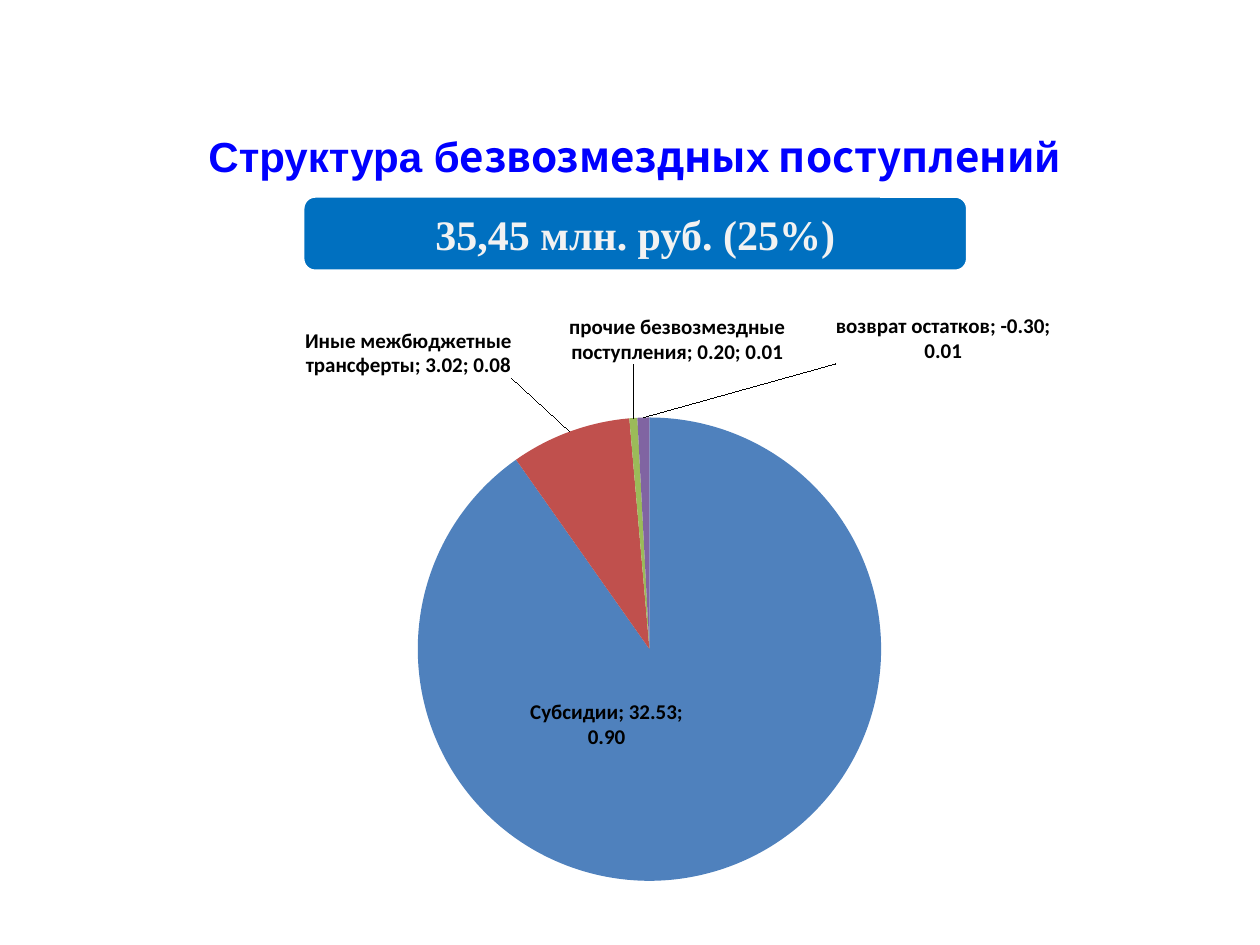
from pptx import Presentation
from pptx.chart.data import CategoryChartData as Data
from pptx.dml.color import RGBColor as RGB
from pptx.enum.chart import XL_CHART_TYPE as Kind, XL_LABEL_POSITION as Pos
from pptx.enum.shapes import MSO_SHAPE as Form
from pptx.enum.text import MSO_ANCHOR as Anchor, PP_ALIGN as Align
from pptx.oxml import parse_xml
from pptx.oxml.ns import nsdecls
from pptx.util import Pt

SANS, NOTO = "Arial", "Noto Sans CJK SC"
TITLE = [("Структура б", SANS), ("езвозмездны", NOTO), ("х", SANS),
         (" поступлени", NOTO), ("й", SANS)]
TOTAL = [("35,45 млн. руб. (25%)", "Times New Roman")]
SLICES = [
    ("Субсидии", 32.53, "4F81BD", Pos.CENTER, -0.07, -0.06),
    ("Иные межбюджетные трансферты", 3.02, "C0504D", Pos.OUTSIDE_END, -0.05, -0.08),
    ("прочие безвозмездные поступления", 0.2, "9BBB59", Pos.OUTSIDE_END, 0.04, -0.08),
    ("возврат остатков", -0.3, "8064A2", Pos.OUTSIDE_END, 0.27, -0.08),
]
PLOT = {"x": 0.07, "y": 0.18, "w": 0.84, "h": 0.8}


def paint(fmt, color):
    fmt.solid()
    fmt.fore_color.rgb = RGB.from_string(color)


def style(font, size, color, name):
    font.size, font.bold, font.name = Pt(size), True, name
    font.color.rgb = RGB.from_string(color)


def write(frame, runs, color):
    frame.vertical_anchor = Anchor.MIDDLE
    para = frame.paragraphs[0]
    para.alignment = Align.CENTER
    for text, name in runs:
        run = para.add_run()
        run.text = text
        style(run.font, 24, color, name)


def layout(modes, sizes):
    tags = "".join(f'<c:{k} val="{v}"/>' for k, v in (modes | sizes).items())
    return parse_xml(f'<c:layout {nsdecls("c")}><c:manualLayout>{tags}'
                     '</c:manualLayout></c:layout>')


def show(node):
    for tag in ("showVal", "showCatName", "showPercent"):
        node.find(f"{{{node.nsmap['c']}}}{tag}").set("val", "1")
    mark = parse_xml(f'<c:separator {nsdecls("c")}>; </c:separator>')
    node.xpath("c:showBubbleSize")[0].addnext(mark)
    node.xpath("c:txPr/a:bodyPr")[0].set("wrap", "square")


deck = Presentation()
deck.slide_width, deck.slide_height = Pt(720), Pt(540)
slide = deck.slides.add_slide(deck.slide_layouts[5])

title = slide.shapes.title
title.left, title.top, title.width, title.height = Pt(65), Pt(71), Pt(595), Pt(36)
write(title.text_frame, TITLE, "0000FF")

data = Data(number_format="#,##0.00")
data.categories = [row[0] for row in SLICES]
data.add_series("Series 1", [row[1] for row in SLICES])
chart = slide.shapes.add_chart(Kind.PIE, Pt(60), Pt(179), Pt(635), Pt(331), data).chart
chart.has_legend = chart.has_title = False
chart.font.size, chart.font.name = Pt(10), "Calibri"
chart.font.color.rgb = RGB.from_string("000000")

area = chart._chartSpace.xpath(".//c:plotArea")[0]
for old in area.xpath("c:layout"):
    area.remove(old)
area.insert(0, layout({"layoutTarget": "inner", "xMode": "edge", "yMode": "edge"}, PLOT))

pie = chart.plots[0].series[0]
labels = pie.data_labels
labels.number_format, labels.number_format_is_linked = "#,##0.00", False
style(labels.font, 12, "000000", "Calibri")
show(labels._element)

for i, (_, _, color, pos, dx, dy) in enumerate(SLICES):
    point = pie.points[i]
    paint(point.format.fill, color)
    label = point.data_label
    style(label.font, 12, "000000", "Calibri")
    label.position = pos
    node = labels._element.xpath(f"c:dLbl[c:idx/@val='{i}']")[0]
    node.xpath("c:idx")[0].addnext(layout({}, {"x": dx, "y": dy}))
    show(node)

box = slide.shapes.add_shape(Form.ROUNDED_RECTANGLE, Pt(173), Pt(112), Pt(380), Pt(43))
box.shadow.inherit = False
paint(box.fill, "0070C0")
paint(box.line.fill, "FFFFFF")
box.line.width = Pt(2)
write(box.text_frame, TOTAL, "F2F2F2")

deck.save("out.pptx")
